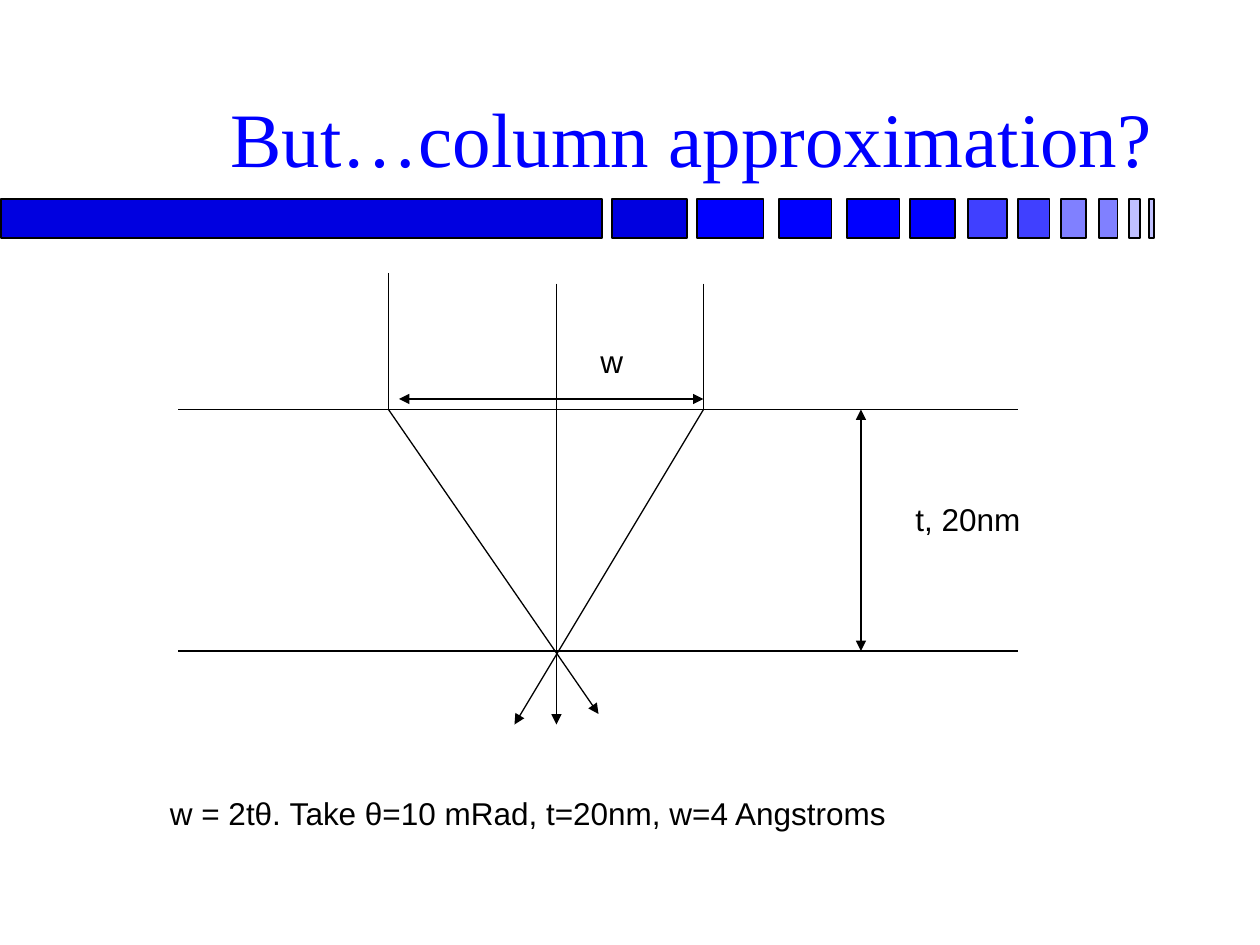
from dataclasses import dataclass

from lxml.etree import SubElement
from pptx import Presentation
from pptx.dml.color import RGBColor
from pptx.enum.shapes import MSO_CONNECTOR, MSO_SHAPE
from pptx.enum.text import MSO_ANCHOR, PP_ALIGN
from pptx.oxml.ns import qn
from pptx.util import Inches, Pt


@dataclass(frozen=True)
class Theme:
    ink: str = "000000"
    accent: str = "0000FF"
    deep: str = "0000E0"
    medium: str = "4040FF"
    light: str = "8080FF"
    pale: str = "C0C0FF"
    title_font: str = "Times New Roman"
    body_font: str = "Arial"
    title_size: int = 44
    body_size: int = 18
    ray_width: float = 0.75
    bar_width: float = 1


THEME = Theme()
CELLS_PER_INCH = 12
LABEL_ROWS = 4.8
BAR_TOP, BAR_HEIGHT = 1.58, 0.31

BARS = [
    (0.01, 4.77, THEME.deep),
    (4.86, 0.59, THEME.deep),
    (5.53, 0.53, THEME.accent),
    (6.18, 0.42, THEME.accent),
    (6.72, 0.42, THEME.accent),
    (7.22, 0.36, THEME.accent),
    (7.68, 0.31, THEME.medium),
    (8.08, 0.25, THEME.medium),
    (8.42, 0.20, THEME.light),
    (8.72, 0.15, THEME.light),
    (8.96, 0.09, THEME.pale),
    (9.12, 0.04, THEME.pale),
]

LEFT_EDGE, RIGHT_EDGE = 17, 97
LEFT_RAY, AXIS, RIGHT_RAY = 37, 53, 67
THICKNESS_COLUMN = 82
TOP_SURFACE, BOTTOM_SURFACE = 39, 62


def grid(cells):
    return Inches(cells / CELLS_PER_INCH)


def add_bar(slide, left, width, color):
    shape = slide.shapes.add_shape(
        MSO_SHAPE.RECTANGLE, Inches(left), Inches(BAR_TOP), Inches(width), Inches(BAR_HEIGHT)
    )
    shape.shadow.inherit = False
    shape.fill.solid()
    shape.fill.fore_color.rgb = RGBColor.from_string(color)
    shape.line.color.rgb = RGBColor.from_string(THEME.ink)
    shape.line.width = Pt(THEME.bar_width)


def add_line(slide, start, end, head=False, tail=False):
    connector = slide.shapes.add_connector(
        MSO_CONNECTOR.STRAIGHT, *(grid(cells) for cells in (*start, *end))
    )
    connector.line.color.rgb = RGBColor.from_string(THEME.ink)
    connector.line.width = Pt(THEME.ray_width)
    properties = connector.line._get_or_add_ln()
    for tag, wanted in (("a:headEnd", head), ("a:tailEnd", tail)):
        if wanted:
            SubElement(properties, qn(tag), type="triangle")
    SubElement(connector._element.spPr, qn("a:effectLst"))


def add_text(slide, text, left, top, width, height, font=THEME.body_font, size=THEME.body_size,
             color=THEME.ink, align=PP_ALIGN.LEFT, anchor=MSO_ANCHOR.TOP):
    shape = slide.shapes.add_textbox(grid(left), grid(top), grid(width), grid(height))
    frame = shape.text_frame
    frame.word_wrap = True
    frame.vertical_anchor = anchor
    paragraph = frame.paragraphs[0]
    paragraph.text = text
    paragraph.alignment = align
    paragraph.font.name = font
    paragraph.font.size = Pt(size)
    paragraph.font.color.rgb = RGBColor.from_string(color)


def add_diagram(slide):
    for surface in (TOP_SURFACE, BOTTOM_SURFACE):
        add_line(slide, (LEFT_EDGE, surface), (RIGHT_EDGE, surface))
    add_line(slide, (AXIS, 27), (AXIS, 69), tail=True)
    for column, source_row, exit_point in (
        (LEFT_RAY, 26, (57, 68)),
        (RIGHT_RAY, 27, (49, 69)),
    ):
        add_line(slide, (column, source_row), (column, TOP_SURFACE))
        add_line(slide, (column, TOP_SURFACE), exit_point, tail=True)
    add_line(slide, (LEFT_RAY + 1, TOP_SURFACE - 1), (RIGHT_RAY, TOP_SURFACE - 1),
             head=True, tail=True)
    add_line(slide, (THICKNESS_COLUMN, TOP_SURFACE), (THICKNESS_COLUMN, BOTTOM_SURFACE),
             head=True, tail=True)


def main():
    presentation = Presentation()
    presentation.slide_width, presentation.slide_height = Inches(10), Inches(7.5)
    slide = presentation.slides.add_slide(presentation.slide_layouts[6])
    for left, width, color in BARS:
        add_bar(slide, left, width, color)
    add_text(slide, "But…column approximation?", 9, 2.5, 102, 15.5,
             font=THEME.title_font, size=THEME.title_size, color=THEME.accent,
             align=PP_ALIGN.RIGHT, anchor=MSO_ANCHOR.BOTTOM)
    add_diagram(slide)
    for text, left, top, width in (
        ("t, 20nm", 86, 47, 14),
        ("w", 56, 32, 12),
        ("w = 2tθ. Take θ=10 mRad, t=20nm, w=4 Angstroms", 15, 75, 88),
    ):
        add_text(slide, text, left, top, width, LABEL_ROWS)
    presentation.save("out.pptx")


if __name__ == "__main__":
    main()
